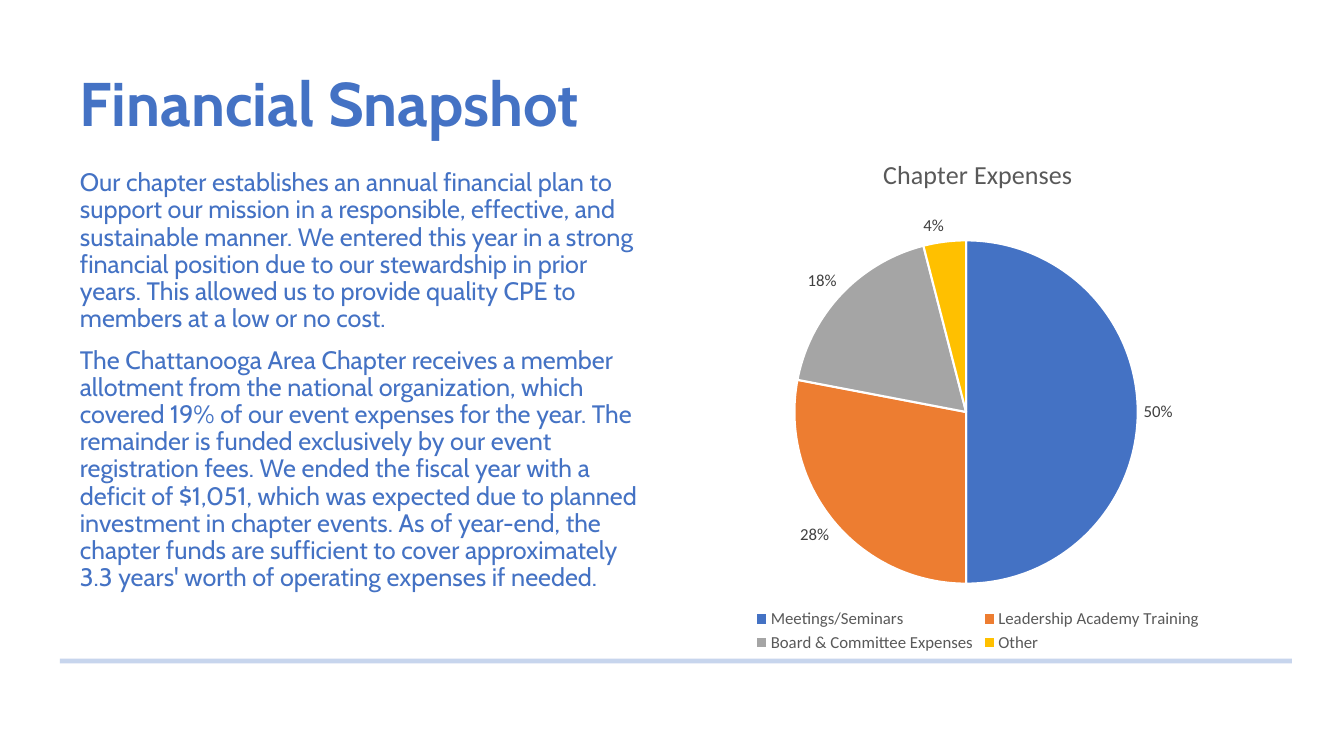
from lxml import etree
from pptx import Presentation
from pptx.chart.data import CategoryChartData
from pptx.dml.color import RGBColor
from pptx.enum.chart import XL_CHART_TYPE, XL_LABEL_POSITION, XL_LEGEND_POSITION
from pptx.enum.shapes import MSO_CONNECTOR
from pptx.enum.text import MSO_ANCHOR
from pptx.oxml.ns import qn
from pptx.util import Pt

PIE = XL_CHART_TYPE.PIE
OUTSIDE_END = XL_LABEL_POSITION.OUTSIDE_END
BOTTOM = XL_LEGEND_POSITION.BOTTOM
STRAIGHT = MSO_CONNECTOR.STRAIGHT
TOP = MSO_ANCHOR.TOP
MIDDLE = MSO_ANCHOR.MIDDLE

EMU_PER_PX = 914400 / 100.8
BLUE = RGBColor(0x44, 0x72, 0xC4)
ORANGE = RGBColor(0xED, 0x7D, 0x31)
GRAY = RGBColor(0xA5, 0xA5, 0xA5)
GOLD = RGBColor(0xFF, 0xC0, 0x00)
PALE_BLUE = RGBColor(0xAB, 0xC0, 0xE4)
TITLE_GRAY = RGBColor(0x59, 0x59, 0x59)
LABEL_GRAY = RGBColor(0x40, 0x40, 0x40)
WHITE = RGBColor(0xFF, 0xFF, 0xFF)

PARAGRAPHS = [
    "Our chapter establishes an annual financial plan to support our mission in a "
    "responsible, effective, and sustainable manner. We entered this year in a strong "
    "financial position due to our stewardship in prior years. This allowed us to "
    "provide quality CPE to members at a low or no cost.",
    "The Chattanooga Area Chapter receives a member allotment from the national "
    "organization, which covered 19% of our event expenses for the year. The remainder "
    "is funded exclusively by our event registration fees. We ended the fiscal year "
    "with a deficit of $1,051, which was expected due to planned investment in chapter "
    "events. As of year-end, the chapter funds are sufficient to cover approximately "
    "3.3 years' worth of operating expenses if needed.",
]
EXPENSES = [
    ("Meetings/Seminars", 50, BLUE),
    ("Leadership Academy Training", 28, ORANGE),
    ("Board & Committee Expenses", 18, GRAY),
    ("Other", 4, GOLD),
]
PLOT_AREA = {"x": 0.19, "y": 0.2, "w": 0.58, "h": 0.66}


def px(length):
    return round(length * EMU_PER_PX)


def format_font(font, size, color, name="Calibri", bold=False):
    font.name = name
    font.size = Pt(size)
    font.bold = bold
    font.color.rgb = color


def write_text(frame, paragraphs, space_before=0, line_spacing=None, **font_format):
    for index, text in enumerate(paragraphs):
        paragraph = frame.add_paragraph() if index else frame.paragraphs[0]
        paragraph.space_before = Pt(space_before if index else 0)
        if line_spacing:
            paragraph.line_spacing = line_spacing
        run = paragraph.add_run()
        run.text = text
        format_font(run.font, **font_format)


class SlideBuilder:
    font_name = "Cabin"
    text_color = BLUE

    def __init__(self, presentation):
        self.slide = presentation.slides.add_slide(presentation.slide_layouts[6])

    def text(self, left, top, width, height, paragraphs, size, bold=False, anchor=TOP):
        box = self.slide.shapes.add_textbox(px(left), px(top), px(width), px(height))
        frame = box.text_frame
        frame.word_wrap = True
        frame.vertical_anchor = anchor
        write_text(frame, paragraphs, space_before=10, line_spacing=0.9, size=size,
                   color=self.text_color, name=self.font_name, bold=bold)

    def rule(self, left, right, y, color, weight, opacity):
        connector = self.slide.shapes.add_connector(
            STRAIGHT, px(left), px(y), px(right), px(y))
        connector.line.color.rgb = color
        connector.line.width = Pt(weight)
        properties = connector.element.spPr
        color_element = properties.find(".//" + qn("a:srgbClr"))
        etree.SubElement(color_element, qn("a:alpha"), val=str(opacity * 1000))
        etree.SubElement(properties, qn("a:effectLst"))

    def pie(self, left, top, width, height, title, slices):
        data = CategoryChartData(number_format="0")
        data.categories = [name for name, value, color in slices]
        data.add_series(title, [value for name, value, color in slices])
        chart = self.slide.shapes.add_chart(
            PIE, px(left), px(top), px(width), px(height), data).chart
        format_font(chart.font, 12, TITLE_GRAY)
        chart.has_title = True
        write_text(chart.chart_title.text_frame, [title], size=18.6, color=TITLE_GRAY)
        chart.chart_title.include_in_layout = False
        chart.has_legend = True
        chart.legend.position = BOTTOM
        chart.legend.include_in_layout = False
        format_font(chart.legend.font, 12, TITLE_GRAY)

        plot = chart.plots[0]
        plot.vary_by_categories = True
        plot.has_data_labels = True
        labels = plot.data_labels
        labels.show_percentage = True
        labels.show_value = False
        labels.number_format = "0%"
        labels.number_format_is_linked = False
        labels.position = OUTSIDE_END
        format_font(labels.font, 12, LABEL_GRAY)
        for index, (name, value, color) in enumerate(slices):
            point = plot.series[0].points[index].format
            point.fill.solid()
            point.fill.fore_color.rgb = color
            point.line.color.rgb = WHITE
            point.line.width = Pt(1.5)
        self.place_plot(chart)

    def place_plot(self, chart):
        plot_area = chart.element.find(".//" + qn("c:plotArea"))
        for layout in plot_area.findall(qn("c:layout")):
            plot_area.remove(layout)
        layout = etree.Element(qn("c:layout"))
        plot_area.insert(0, layout)
        manual = etree.SubElement(layout, qn("c:manualLayout"))
        settings = {"layoutTarget": "inner", "xMode": "edge", "yMode": "edge", **PLOT_AREA}
        for tag, value in settings.items():
            etree.SubElement(manual, qn("c:" + tag), val=str(value))


def main():
    presentation = Presentation()
    presentation.slide_width = px(1344)
    presentation.slide_height = px(756)
    builder = SlideBuilder(presentation)
    builder.rule(60, 1292, 661, PALE_BLUE, weight=3.5, opacity=65)
    builder.text(70, 49, 871, 116, ["Financial Snapshot"], size=44, bold=True, anchor=MIDDLE)
    builder.text(70, 165, 592, 466, PARAGRAPHS, size=18)
    builder.pie(682, 136, 592, 521, "Chapter Expenses", EXPENSES)
    presentation.save("out.pptx")


if __name__ == "__main__":
    main()
